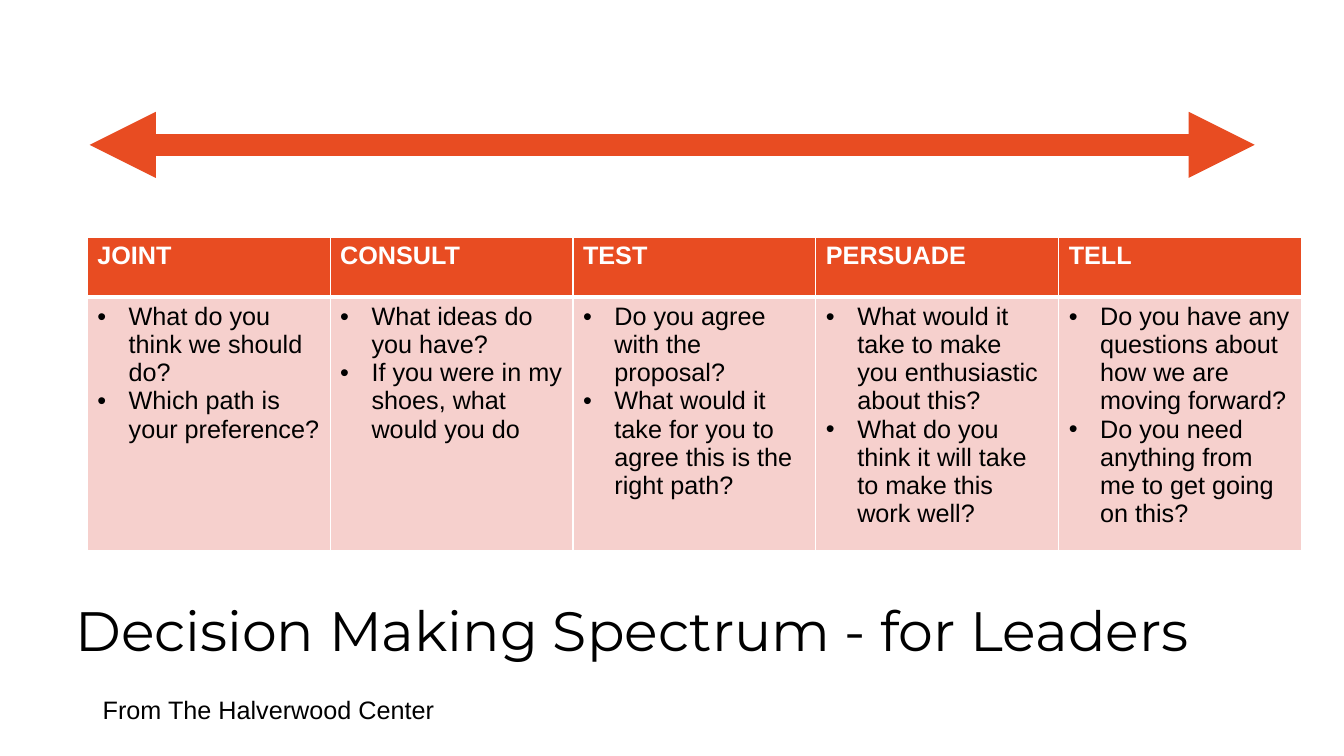
from dataclasses import dataclass

from lxml.etree import SubElement
from pptx import Presentation
from pptx.dml.color import RGBColor as RGB
from pptx.enum.shapes import MSO_CONNECTOR as CONN
from pptx.enum.text import MSO_ANCHOR as ANCHOR
from pptx.oxml.ns import qn
from pptx.util import Cm, Pt


@dataclass(frozen=True)
class Theme:
    """Colours, fonts and type sizes."""
    accent: str = "E84C22"
    tint: str = "F6D0CD"
    ink: str = "000000"
    paper: str = "FFFFFF"
    head_font: str = "Montserrat"
    body_font: str = "Arial"
    title_size: float = 39.6
    body_size: float = 18


class Deck:
    """Draws styled elements on the current slide."""

    def __init__(self, prs, theme):
        """Add a blank slide to draw on."""
        self.t = theme
        self.s = prs.slides.add_slide(prs.slide_layouts[6])

    def style(self, p, color, size=None, font=None, bold=False):
        """Set the font of a paragraph."""
        f = p.font
        f.name = font or self.t.body_font
        f.size = Pt(size or self.t.body_size)
        f.bold = bold
        f.color.rgb = RGB.from_string(color)

    def text(self, text, x, y, w, h, size=None, font=None, wrap=True,
             anchor=ANCHOR.TOP, spacing=None):
        """Add a one-paragraph text box."""
        tf = self.s.shapes.add_textbox(Cm(x), Cm(y), Cm(w), Cm(h)).text_frame
        tf.word_wrap = wrap
        tf.vertical_anchor = anchor
        p = tf.paragraphs[0]
        p.text = text
        p.line_spacing = spacing
        self.style(p, self.t.ink, size, font)

    def arrow(self, x1, x2, y, width):
        """Add a horizontal double-headed arrow."""
        c = self.s.shapes.add_connector(CONN.STRAIGHT, Cm(x1), Cm(y), Cm(x2), Cm(y))
        c.line.color.rgb = RGB.from_string(self.t.accent)
        c.line.width = Pt(width)
        ln = c.line._get_or_add_ln()
        for end in ("a:headEnd", "a:tailEnd"):
            SubElement(ln, qn(end), type="triangle")
        SubElement(c._element.spPr, qn("a:effectLst"))

    def borders(self, cell, bottom):
        """Outline a cell, with its own bottom width in points."""
        tc_pr = cell._tc.get_or_add_tcPr()
        for side, width in zip("LRTB", (1, 1, 1, bottom)):
            ln = SubElement(tc_pr, qn(f"a:ln{side}"), w=str(Pt(width)))
            fill = SubElement(ln, qn("a:solidFill"))
            SubElement(fill, qn("a:srgbClr"), val=self.t.paper)

    def bullet(self, p):
        """Give a paragraph a hanging bullet."""
        p_pr = p._p.get_or_add_pPr()
        p_pr.set("marL", str(Cm(0.79)))
        p_pr.set("indent", str(-Cm(0.79)))
        SubElement(p_pr, qn("a:buFont"), typeface=self.t.body_font)
        SubElement(p_pr, qn("a:buChar"), char="•")

    def cell(self, cell, lines, fill, color, header):
        """Fill one table cell with a heading or bullets."""
        self.borders(cell, 3 if header else 1)
        cell.fill.solid()
        cell.fill.fore_color.rgb = RGB.from_string(fill)
        cell.text_frame.text = "\n".join(lines)
        for p in cell.text_frame.paragraphs:
            self.style(p, color, bold=header)
            if not header:
                self.bullet(p)

    def table(self, columns, x, y, col_w, row_heights):
        """Add a table with a heading and bullets in each column."""
        n = len(columns)
        tbl = self.s.shapes.add_table(2, n, Cm(x), Cm(y), Cm(n * col_w),
                                      Cm(sum(row_heights))).table
        for row, h in zip(tbl.rows, row_heights):
            row.height = Cm(h)
        for i, (heading, questions) in enumerate(columns.items()):
            tbl.columns[i].width = Cm(col_w)
            self.cell(tbl.cell(0, i), [heading], self.t.accent, self.t.paper, True)
            self.cell(tbl.cell(1, i), questions, self.t.tint, self.t.ink, False)


SPECTRUM = {
    "JOINT": ["What do you think we should do?",
              "Which path is your preference?"],
    "CONSULT": ["What ideas do you have?",
                "If you were in my shoes, what would you do"],
    "TEST": ["Do you agree with the proposal?",
             "What would it take for you to agree this is the right path?"],
    "PERSUADE": ["What would it take to make you enthusiastic about this?",
                 "What do you think it will take to make this work well?"],
    "TELL": ["Do you have any questions about how we are moving forward?",
             "Do you need anything from me to get going on this?"],
}


def main():
    """Build and save the slide."""
    prs = Presentation()
    prs.slide_width, prs.slide_height = Cm(33.87), Cm(19.05)
    theme = Theme()
    deck = Deck(prs, theme)
    deck.text("Decision Making Spectrum - for Leaders", 1.65, 14.43, 31.45, 3.05,
              theme.title_size, theme.head_font, anchor=ANCHOR.MIDDLE, spacing=0.9)
    deck.text("From The Halverwood Center", 2.34, 17.37, 9.3, 1.02, wrap=False)
    deck.arrow(2.26, 31.62, 3.65, 15.75)
    deck.table(SPECTRUM, 2.2, 5.97, 6.12, (1.52, 6.38))
    prs.save("out.pptx")


if __name__ == "__main__":
    main()
